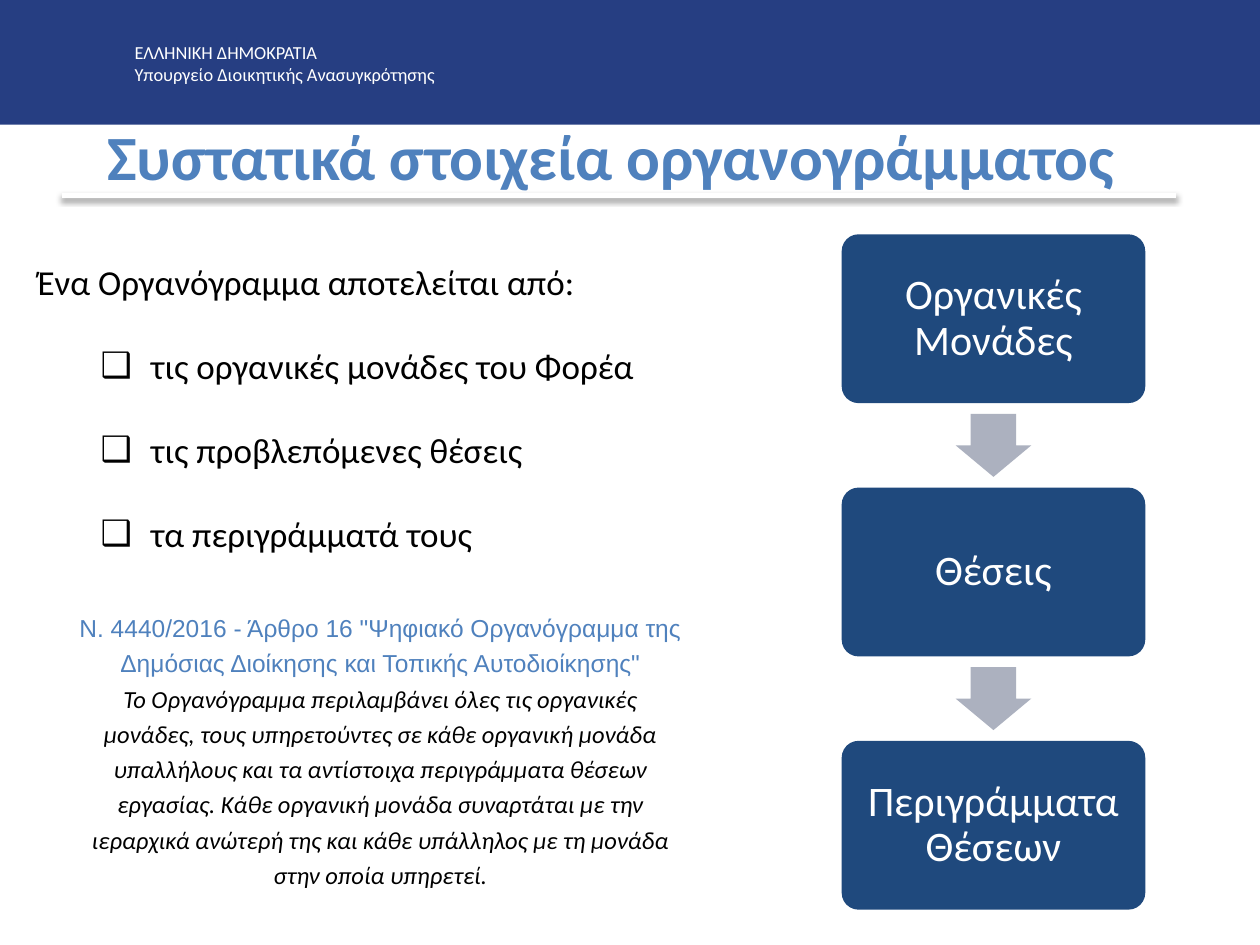
from lxml.etree import SubElement
from pptx import Presentation
from pptx.dml.color import RGBColor
from pptx.enum.shapes import MSO_CONNECTOR, MSO_SHAPE
from pptx.enum.text import MSO_ANCHOR, PP_ALIGN
from pptx.oxml import parse_xml
from pptx.oxml.ns import nsdecls, qn
from pptx.util import Inches, Pt

NAVY = RGBColor(0x26, 0x3E, 0x82)
DARK_BLUE = RGBColor(0x1F, 0x49, 0x7D)
BLUE = RGBColor(0x4F, 0x81, 0xBD)
GREY = RGBColor(0xAC, 0xB1, 0xBF)
WHITE = RGBColor(0xFF, 0xFF, 0xFF)
BLACK = RGBColor(0, 0, 0)


def shadow_effect(blur, dist, alpha):
    return parse_xml(
        f'<a:effectLst {nsdecls("a")}><a:outerShdw blurRad="{Pt(blur)}" '
        f'dist="{Pt(dist)}" dir="5400000" rotWithShape="0">'
        f'<a:srgbClr val="000000"><a:alpha val="{alpha * 1000}"/></a:srgbClr>'
        '</a:outerShdw></a:effectLst>')


class SlideBuilder:
    font = "Calibri"

    def __init__(self, slide):
        self.s = slide

    def shape(self, kind, x, y, w, h, fill, adjustments=()):
        sp = self.s.shapes.add_shape(kind, Inches(x), Inches(y), Inches(w), Inches(h))
        sp.shadow.inherit = False
        sp.fill.solid()
        sp.fill.fore_color.rgb = fill
        sp.line.fill.background()
        for i, value in enumerate(adjustments):
            sp.adjustments[i] = value
        return sp

    def line(self, x1, y1, x2, y2, color, width):
        cn = self.s.shapes.add_connector(
            MSO_CONNECTOR.STRAIGHT, Inches(x1), Inches(y1), Inches(x2), Inches(y2))
        cn.line.color.rgb = color
        cn.line.width = Pt(width)
        cn._element.spPr.append(shadow_effect(3.1, 1.8, 35))

    def text_box(self, x, y, w, h, anchor=MSO_ANCHOR.TOP):
        tf = self.s.shapes.add_textbox(
            Inches(x), Inches(y), Inches(w), Inches(h)).text_frame
        tf.word_wrap = True
        tf.vertical_anchor = anchor
        return tf

    def paragraph(self, tf, text, size, color, align=PP_ALIGN.LEFT, spacing=1.0,
                  font=None, bold=False, italic=False, bullet=None):
        p = tf.paragraphs[0] if not tf.text else tf.add_paragraph()
        p.text = text
        p.alignment = align
        p.line_spacing = spacing
        if bullet:
            p.level = 1
            pPr = p._p.get_or_add_pPr()
            pPr.set("marL", str(Inches(0.9)))
            pPr.set("indent", str(Inches(-0.4)))
            SubElement(pPr, qn("a:buFont")).set("typeface", "Arial")
            SubElement(pPr, qn("a:buChar")).set("char", bullet)
        r = p.runs[0]
        r.font.size = Pt(size)
        r.font.name = font or self.font
        r.font.color.rgb = color
        r.font.bold = bold
        r.font.italic = italic
        return r

    def step(self, x, y, w, h, label):
        sp = self.shape(MSO_SHAPE.ROUNDED_RECTANGLE, x, y, w, h, DARK_BLUE, [0.1])
        tf = sp.text_frame
        tf.word_wrap = True
        tf.vertical_anchor = MSO_ANCHOR.MIDDLE
        tf.margin_left = tf.margin_right = Inches(0.1)
        tf.margin_top = tf.margin_bottom = Inches(0.1)
        self.paragraph(tf, label, 24, WHITE, PP_ALIGN.CENTER, 0.9)


def main():
    prs = Presentation()
    prs.slide_width, prs.slide_height = Inches(10), Inches(7.5)
    b = SlideBuilder(prs.slides.add_slide(prs.slide_layouts[6]))

    # Header band
    b.shape(MSO_SHAPE.RECTANGLE, 0, 0, 10, 0.99, NAVY)
    tf = b.text_box(0.97, 0.28, 4.03, 0.84)
    for text in ("ΕΛΛΗΝΙΚΗ ΔΗΜΟΚΡΑΤΙΑ", "Υπουργείο Διοικητικής Ανασυγκρότησης"):
        b.paragraph(tf, text, 10.5, WHITE)

    # Title and rule
    b.line(0.49, 1.55, 9.33, 1.55, WHITE, 3)
    tf = b.text_box(0.35, 0.84, 9, 0.79, MSO_ANCHOR.MIDDLE)
    r = b.paragraph(tf, "Συστατικά στοιχεία οργανογράμματος", 36, BLUE,
                    PP_ALIGN.CENTER, bold=True)
    r._r.rPr.find(qn("a:latin")).addprevious(shadow_effect(4, 3, 38))

    # Components list
    tf = b.text_box(0.2, 2.02, 5.4, 2.46)
    b.paragraph(tf, "Ένα Οργανόγραμμα αποτελείται από:", 20, BLACK, PP_ALIGN.JUSTIFY)
    for text in ("τις οργανικές μονάδες του Φορέα", "τις προβλεπόμενες θέσεις",
                 "τα περιγράμματά τους"):
        b.paragraph(tf, text, 20, BLACK, PP_ALIGN.JUSTIFY, 2.0, bullet="❑")

    # Step diagram
    x, top, w, h, pitch = 6.68, 1.86, 2.41, 1.34, 2.01
    arrow_w, arrow_h = 0.6, 0.5
    labels = ("Οργανικές Μονάδες", "Θέσεις", "Περιγράμματα Θέσεων")
    for i, label in enumerate(labels):
        y = top + i * pitch
        b.step(x, y, w, h, label)
        if i < len(labels) - 1:
            b.shape(MSO_SHAPE.DOWN_ARROW, x + (w - arrow_w) / 2,
                    y + (h + pitch - arrow_h) / 2, arrow_w, arrow_h, GREY, [0.6, 0.5])

    # Legal reference
    tf = b.text_box(0.51, 4.77, 5.02, 2.58)
    b.paragraph(tf, 'Ν. 4440/2016 - Άρθρο 16 "Ψηφιακό Οργανόγραμμα της Δημόσιας '
                'Διοίκησης και Τοπικής Αυτοδιοίκησης"',
                14, BLUE, PP_ALIGN.CENTER, 1.2, font="Arial")
    b.paragraph(tf, "Το Οργανόγραμμα περιλαμβάνει όλες τις οργανικές μονάδες, τους "
                "υπηρετούντες σε κάθε οργανική μονάδα υπαλλήλους και τα αντίστοιχα "
                "περιγράμματα θέσεων εργασίας. Κάθε οργανική μονάδα συναρτάται με την "
                "ιεραρχικά ανώτερή της και κάθε υπάλληλος με τη μονάδα στην οποία "
                "υπηρετεί.", 14, BLACK, PP_ALIGN.CENTER, 1.2, italic=True)

    prs.save("out.pptx")


if __name__ == "__main__":
    main()
